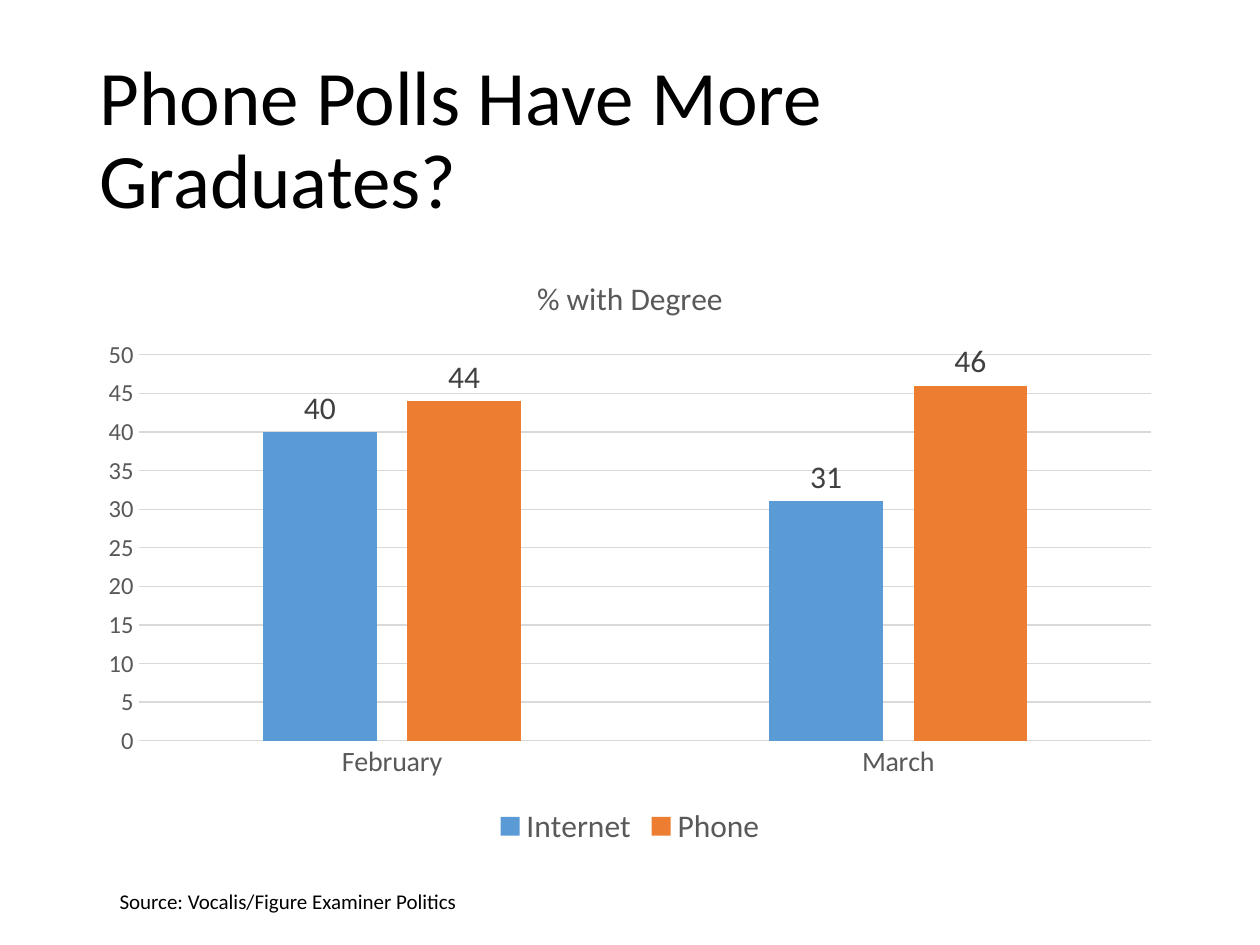
import pptx
import pptx.chart.data
import pptx.dml.color
import pptx.enum.chart
import pptx.enum.text
import pptx.util
from pptx.util import Cm, Pt

FONT = "Calibri"
GREY = "595959"
RULE = "D9D9D9"


def color(code):
    return pptx.dml.color.RGBColor.from_string(code)


def style(font, size, code):
    font.name = FONT
    font.size = Pt(size)
    font.bold = False
    font.color.rgb = color(code)


deck = pptx.Presentation()
deck.slide_width = Cm(25.4)
deck.slide_height = Cm(19.05)
page = deck.slides.add_slide(deck.slide_layouts[5])

# Title
title = page.shapes.title
title.left, title.top, title.width, title.height = Cm(1.75), Cm(1.02), Cm(21.9), Cm(3.68)
title.text_frame.word_wrap = True
title.text_frame.vertical_anchor = pptx.enum.text.MSO_ANCHOR.MIDDLE
para = title.text_frame.paragraphs[0]
para.alignment = pptx.enum.text.PP_ALIGN.LEFT
para.line_spacing = 0.9
span = para.add_run()
span.text = "Phone Polls Have More Graduates?"
style(span.font, 44, "000000")

# Column chart
polls = pptx.chart.data.CategoryChartData(number_format="General")
polls.categories = ["February", "March"]
polls.add_series("Internet", [40, 31])
polls.add_series("Phone", [44, 46])
chart = page.shapes.add_chart(
    pptx.enum.chart.XL_CHART_TYPE.COLUMN_CLUSTERED,
    Cm(1.75), Cm(5.08), Cm(21.9), Cm(12.09), polls).chart
style(chart.font, 10, "000000")

# Chart title and legend
chart.has_title = True
span = chart.chart_title.text_frame.paragraphs[0].add_run()
span.text = "% with Degree"
style(span.font, 18, GREY)
chart.chart_title.include_in_layout = False
chart.has_legend = True
chart.legend.position = pptx.enum.chart.XL_LEGEND_POSITION.BOTTOM
chart.legend.include_in_layout = False
style(chart.legend.font, 18, GREY)

# Axes
for axis, size in ((chart.category_axis, 16), (chart.value_axis, 14)):
    axis.major_tick_mark = pptx.enum.chart.XL_TICK_MARK.NONE
    axis.minor_tick_mark = pptx.enum.chart.XL_TICK_MARK.NONE
    style(axis.tick_labels.font, size, GREY)
chart.value_axis.format.line.fill.background()
chart.value_axis.has_major_gridlines = True
for line in (chart.category_axis.format.line,
             chart.value_axis.major_gridlines.format.line):
    line.color.rgb = color(RULE)
    line.width = Pt(0.75)

# Columns and their labels
plot = chart.plots[0]
plot.gap_width = 219
plot.overlap = -27
plot.vary_by_categories = False
for series, code in zip(plot.series, ("5B9BD5", "ED7D31")):
    series.format.fill.solid()
    series.format.fill.fore_color.rgb = color(code)
    series.invert_if_negative = False
    labels = series.data_labels
    labels.show_value = True
    labels.position = pptx.enum.chart.XL_LABEL_POSITION.OUTSIDE_END
    style(labels.font, 18, "404040")

# Source line
box = page.shapes.add_textbox(Cm(2.16), Cm(17.78), Cm(13.74), Cm(0.77))
box.text_frame.word_wrap = True
box.text_frame.auto_size = pptx.enum.text.MSO_AUTO_SIZE.SHAPE_TO_FIT_TEXT
span = box.text_frame.paragraphs[0].add_run()
span.text = "Source: Vocalis/Figure Examiner Politics"
style(span.font, 12, "000000")

deck.save("out.pptx")
